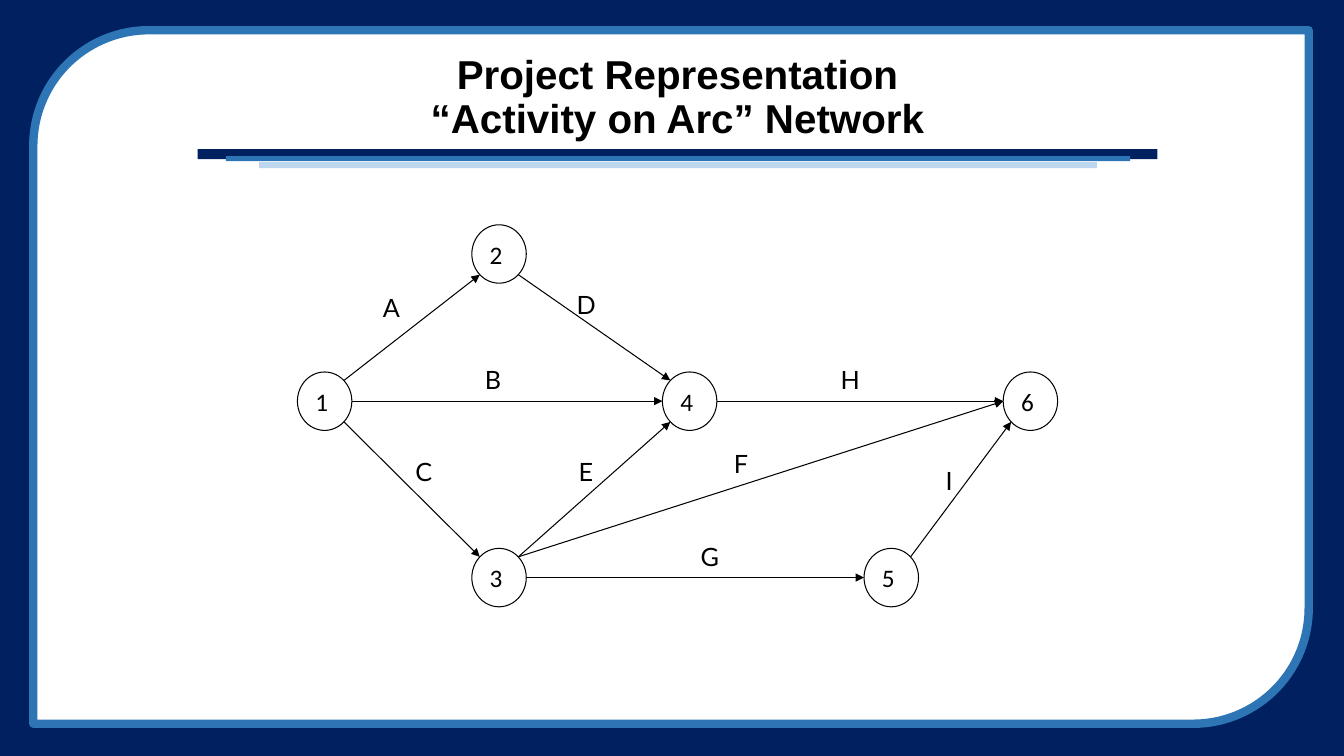
from lxml import etree
from pptx import Presentation
from pptx import util as u
from pptx.dml.color import RGBColor
from pptx.enum import shapes, text
from pptx.oxml.ns import qn

PX = 9144  # EMU per px, 100 px to the inch
NAVY = RGBColor(0x00, 0x20, 0x60)
BLUE = RGBColor(0x2E, 0x75, 0xB6)
PALE = RGBColor(0xBD, 0xD7, 0xEE)
WHITE = RGBColor(0xFF, 0xFF, 0xFF)
BLACK = RGBColor(0x00, 0x00, 0x00)

NODE_W, NODE_H = 54, 58
DIAGONAL = 0.71  # share of the radius at which a slanted arc meets a node

# node: centre
NODES = {
    "1": (322, 398),
    "2": (495, 252),
    "3": (495, 573),
    "4": (684, 398),
    "5": (884, 573),
    "6": (1022, 398),
}

# activity: start node and side, end node and side, label left, top, width
# A side is (x, y), each -1, 0 or 1, seen from the centre of the node.
ACTIVITIES = {
    "A": ("1", (1, -1), "2", (-1, 1), 370, 285, 35),
    "B": ("1", (1, 0), "4", (-1, 0), 471, 357, 35),
    "C": ("1", (1, 1), "3", (-1, -1), 402, 448, 35),
    "D": ("2", (1, 1), "4", (-1, -1), 562, 282, 37),
    "E": ("3", (1, -1), "4", (-1, 1), 564, 448, 34),
    "F": ("3", (1, -1), "6", (-1, 0), 718, 440, 33),
    "G": ("3", (1, 0), "5", (-1, 0), 685, 532, 37),
    "H": ("4", (1, 0), "6", (-1, 0), 824, 357, 37),
    "I": ("5", (1, -1), "6", (-1, 1), 928, 457, 29),
}


def px(*lengths):
    return [u.Emu(round(n * PX)) for n in lengths]


def add_shape(s, kind, box, fill=None, line=None, width=0):
    sp = s.shapes.add_shape(kind, *px(*box))
    sp.shadow.inherit = False
    if fill is None:
        sp.fill.background()
    else:
        sp.fill.solid()
        sp.fill.fore_color.rgb = fill
    if line is None:
        sp.line.fill.background()
    else:
        sp.line.color.rgb = line
        sp.line.width = u.Pt(width)
    return sp


def write(sp, words, font, size, align=text.PP_ALIGN.LEFT, wrap=False):
    tf = sp.text_frame
    tf.word_wrap = wrap
    tf.text = words
    p = tf.paragraphs[0]
    p.alignment = align
    p.font.name = font
    p.font.size = u.Pt(size)
    p.font.color.rgb = BLACK
    return tf


def add_frame(s):
    add_shape(s, shapes.MSO_SHAPE.RECTANGLE, (0, 0, 1333, 750), NAVY)
    add_shape(s, shapes.MSO_SHAPE.ROUND_2_DIAG_RECTANGLE,
              (33, 30, 1265, 688), WHITE, BLUE, 6)


def add_title(s, words):
    for box, color in (((196, 148, 952, 10), NAVY),
                       ((224, 155, 897, 5), BLUE),
                       ((257, 161, 831, 6), PALE)):
        add_shape(s, shapes.MSO_SHAPE.RECTANGLE, box, color)
    sp = s.shapes.add_textbox(*px(196, 49, 952, 97))
    tf = write(sp, words, "Arial", 28.8, text.PP_ALIGN.CENTER, wrap=True)
    tf.vertical_anchor = text.MSO_ANCHOR.MIDDLE
    p = tf.paragraphs[0]
    p.line_spacing = 0.9
    p.font.bold = True


def add_node(s, name):
    x, y = NODES[name]
    box = (x - NODE_W / 2, y - NODE_H / 2, NODE_W, NODE_H)
    sp = add_shape(s, shapes.MSO_SHAPE.OVAL, box, line=BLACK, width=0.75)
    tf = write(sp, name, "Calibri", 18)
    tf.vertical_anchor = text.MSO_ANCHOR.MIDDLE


def node_edge(name, side):
    """Return the point where an arc meets the given side of a node."""
    x, y = NODES[name]
    dx, dy = side
    reach = DIAGONAL if dx and dy else 1
    return x + dx * reach * NODE_W / 2, y + dy * reach * NODE_H / 2


def add_arc(s, start, end):
    c = s.shapes.add_connector(shapes.MSO_CONNECTOR.STRAIGHT,
                               *px(*start, *end))
    c.line.color.rgb = BLACK
    c.line.width = u.Pt(0.75)
    etree.SubElement(c.line._get_or_add_ln(), qn("a:tailEnd"), type="triangle")
    etree.SubElement(c._element.spPr, qn("a:effectLst"))


def add_label(s, name, left, top, width):
    sp = s.shapes.add_textbox(*px(left, top, width, 40))
    tf = write(sp, name, "Lato", 18)
    tf.auto_size = text.MSO_AUTO_SIZE.SHAPE_TO_FIT_TEXT


def main():
    prs = Presentation()
    prs.slide_width, prs.slide_height = px(1333, 750)
    s = prs.slides.add_slide(prs.slide_layouts[6])
    add_frame(s)
    add_title(s, "Project Representation\v“Activity on Arc” Network")
    for name in NODES:
        add_node(s, name)
    for start, out, end, into, *_ in ACTIVITIES.values():
        add_arc(s, node_edge(start, out), node_edge(end, into))
    for name, (*_, left, top, width) in ACTIVITIES.items():
        add_label(s, name, left, top, width)
    prs.save("out.pptx")


if __name__ == "__main__":
    main()
